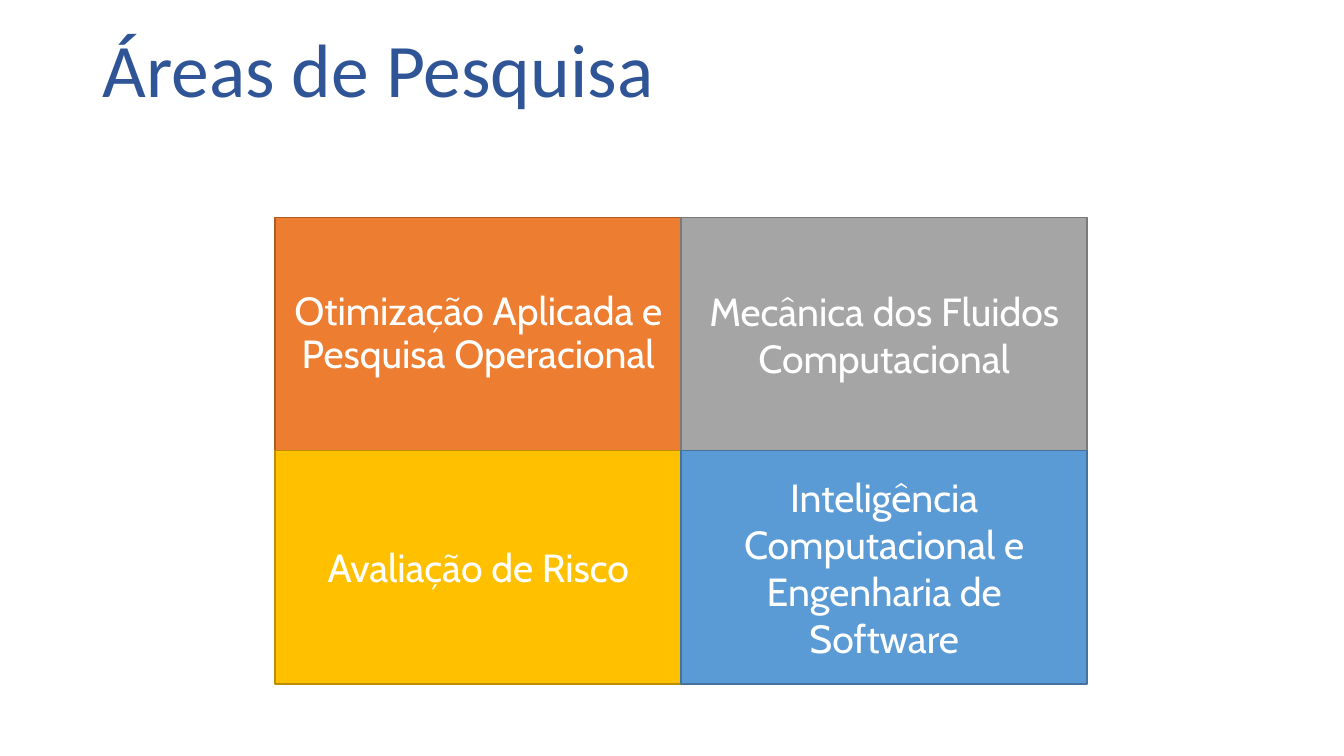
from pptx import Presentation
from pptx import util as u
from pptx.dml import color
from pptx.enum import shapes, text

AREAS = [
    ("Otimização Aplicada e Pesquisa Operacional", "ED7D31", "AF5C24", 0.9),
    ("Mecânica dos Fluidos Computacional", "A5A5A5", "7A7A7A", 1.0),
    ("Avaliação de Risco", "FFC000", "BD8E00", 1.0),
    ("Inteligência Computacional e Engenharia de Software", "5B9BD5", "43739E", 1.0),
]


def paint(target, shade):
    """Give a colour format the colour of a hex string."""
    target.rgb = color.RGBColor.from_string(shade)


def write(frame, words, size, font, shade, align, spacing=1.0):
    """Write one formatted paragraph, centred vertically in its frame."""
    frame.word_wrap = True
    frame.auto_size = text.MSO_AUTO_SIZE.NONE
    frame.vertical_anchor = text.MSO_ANCHOR.MIDDLE
    line = frame.paragraphs[0]
    line.alignment = align
    line.line_spacing = spacing
    line.space_before = u.Pt(0)
    run = line.add_run()
    run.text = words
    run.font.size = u.Pt(size)
    run.font.name = font
    paint(run.font.color, shade)


def add_heading(slide, left, top, width, height):
    """Place the slide title in the given box."""
    heading = slide.shapes.title
    heading.left, heading.top = u.Pt(left), u.Pt(top)
    heading.width, heading.height = u.Pt(width), u.Pt(height)
    write(heading.text_frame, "Áreas de Pesquisa", size=54, font="Calibri",
          shade="2F5597", align=text.PP_ALIGN.LEFT, spacing=0.9)


def add_areas(slide, left, top, width, height, columns=2):
    """Fill the given box with a grid of research areas."""
    area_width = width / columns
    area_height = height / (len(AREAS) / columns)
    for index, (words, fill, outline, spacing) in enumerate(AREAS):
        row, column = divmod(index, columns)
        area = slide.shapes.add_shape(
            shapes.MSO_SHAPE.RECTANGLE,
            u.Pt(left + column * area_width), u.Pt(top + row * area_height),
            u.Pt(area_width), u.Pt(area_height))
        area.shadow.inherit = False
        area.fill.solid()
        paint(area.fill.fore_color, fill)
        paint(area.line.color, outline)
        area.line.width = u.Pt(1)
        write(area.text_frame, words, size=28, font="Cabin", shade="FFFFFF",
              align=text.PP_ALIGN.CENTER, spacing=spacing)


def main():
    """Build and save the presentation."""
    deck = Presentation()
    deck.slide_width, deck.slide_height = u.Pt(960), u.Pt(540)
    slide = deck.slides.add_slide(deck.slide_layouts[5])
    add_heading(slide, 66, 0, 791, 104.5)
    add_areas(slide, 196.5, 155.5, 580, 333)
    deck.save("out.pptx")


if __name__ == "__main__":
    main()
